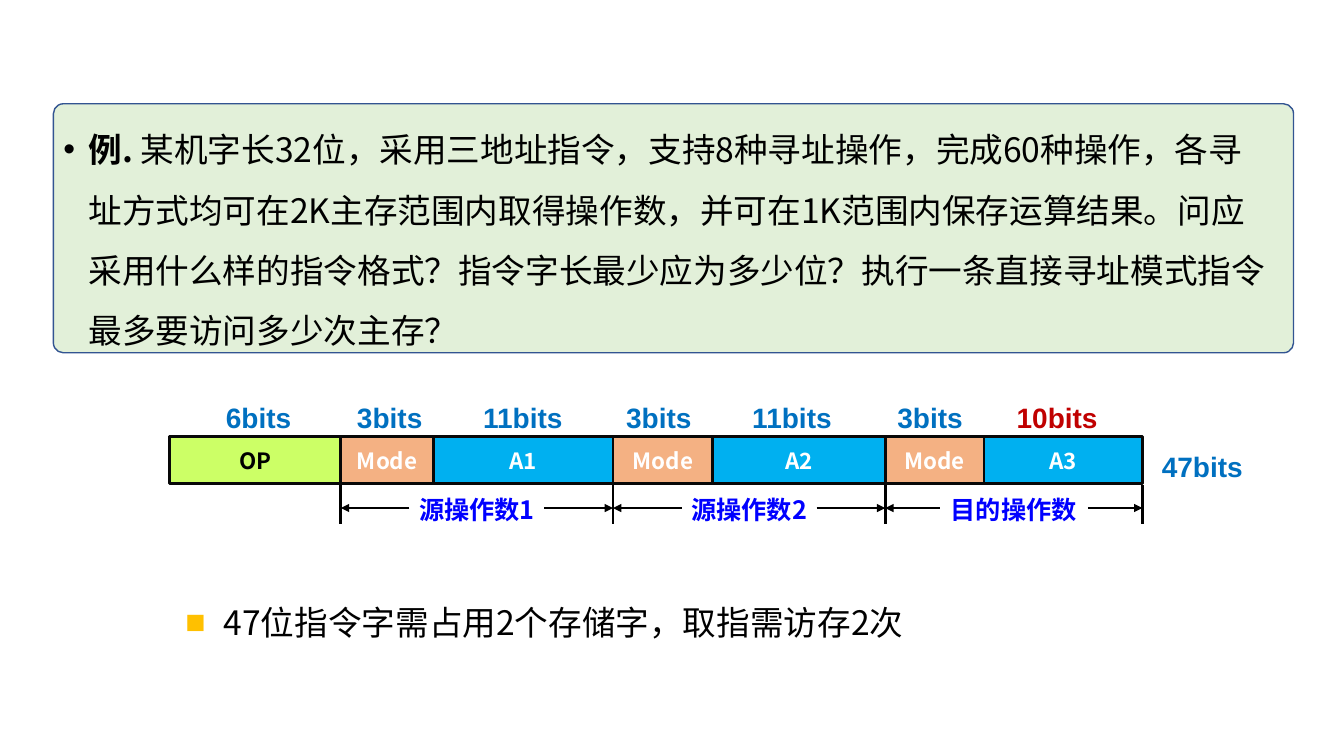
import pptx
import pptx.util
import pptx.dml.color
import pptx.enum.shapes
import pptx.enum.text
import pptx.oxml
import pptx.oxml.ns
import lxml.etree

PX = 9144
COLORS = {
    "black": "000000", "white": "FFFFFF", "panel": "E2F0D9", "panel_line": "325491",
    "op": "CCFF66", "mode": "F4B183", "address": "00B0F0", "cell_line": "080808",
    "bits": "0070C0", "changed_bits": "C00000", "operand": "0000FF", "bullet": "FFC000",
}
CJK = "Noto Sans CJK SC"
ALIGN = pptx.enum.text.PP_ALIGN
SHAPE = pptx.enum.shapes.MSO_SHAPE

FIELDS = [
    ("OP", 170, "op", "black", "6bits", 256, "bits"),
    ("Mode", 92, "mode", "white", "3bits", 386, "bits"),
    ("A1", 178, "address", "white", "11bits", 518, "bits"),
    ("Mode", 99, "mode", "white", "3bits", 653, "bits"),
    ("A2", 171, "address", "white", "11bits", 785, "bits"),
    ("Mode", 98, "mode", "white", "3bits", 922, "bits"),
    ("A3", 157, "address", "white", "10bits", 1048, "changed_bits"),
]
OPERANDS = [("源操作数1", 1, 68), ("源操作数2", 3, 68), ("目的操作数", 5, 54)]
QUESTION = ("某机字长32位，采用三地址指令，支持8种寻址操作，完成60种操作，"
            "各寻址方式均可在2K主存范围内取得操作数，并可在1K范围内保存运算结果。"
            "问应采用什么样的指令格式？指令字长最少应为多少位？"
            "执行一条直接寻址模式指令最多要访问多少次主存？")


def rgb(name):
    """Return the named colour."""
    return pptx.dml.color.RGBColor.from_string(COLORS[name])


def px(*lengths):
    """Turn pixel lengths into EMU."""
    return [pptx.util.Emu(n * PX) for n in lengths]


def format_run(r, size, color, bold=False, font=CJK):
    """Set the font of a run for Latin and East Asian text."""
    r.font.size = pptx.util.Pt(size)
    r.font.bold = bold
    r.font.name = font
    r.font.color.rgb = rgb(color)
    ea = lxml.etree.SubElement(r.font._element, pptx.oxml.ns.qn("a:ea"))
    ea.set("typeface", font)
    r.font._element.find(pptx.oxml.ns.qn("a:latin")).addnext(ea)


def add_box(slide, kind, box, fill, line, width):
    """Draw a filled and outlined shape."""
    sp = slide.shapes.add_shape(kind, *px(*box))
    sp.shadow.inherit = False
    sp.fill.solid()
    sp.fill.fore_color.rgb = rgb(fill)
    sp.line.color.rgb = rgb(line)
    sp.line.width = pptx.util.Pt(width)
    return sp


def add_label(slide, box, text, size, color, font=CJK):
    """Place a centred bold label."""
    tf = slide.shapes.add_textbox(*px(*box)).text_frame
    tf.word_wrap = True
    p = tf.paragraphs[0]
    p.text = text
    p.alignment = ALIGN.CENTER
    format_run(p.runs[0], size, color, True, font)


def add_line(slide, start, end, width, arrow=False):
    """Draw a straight line, with an arrowhead at its end if asked."""
    c = slide.shapes.add_connector(
        pptx.enum.shapes.MSO_CONNECTOR.STRAIGHT, *px(*start, *end))
    c.line.color.rgb = rgb("black")
    c.line.width = pptx.util.Pt(width)
    if arrow:
        ln = c.line._get_or_add_ln()
        lxml.etree.SubElement(ln, pptx.oxml.ns.qn("a:tailEnd")).set("type", "triangle")
    lxml.etree.SubElement(c._element.spPr, pptx.oxml.ns.qn("a:effectLst"))


def add_bullet_text(slide, box, runs, indent, char, color, align):
    """Place a bulleted paragraph made of (text, bold) runs."""
    tf = slide.shapes.add_textbox(*px(*box)).text_frame
    tf.word_wrap = True
    p = tf.paragraphs[0]
    p.alignment = align
    p.line_spacing = 1.5
    p.space_before = pptx.util.Pt(10)
    for text, bold in runs:
        r = p.add_run()
        r.text = text
        format_run(r, 24, "black", bold)
    pPr = p._p.get_or_add_pPr()
    pPr.set("marL", str(indent * PX))
    pPr.set("indent", str(-indent * PX))
    clr = lxml.etree.SubElement(pPr, pptx.oxml.ns.qn("a:buClr"))
    lxml.etree.SubElement(clr, pptx.oxml.ns.qn("a:srgbClr")).set("val", COLORS[color])
    lxml.etree.SubElement(pPr, pptx.oxml.ns.qn("a:buFont")).set("typeface", "Arial")
    lxml.etree.SubElement(pPr, pptx.oxml.ns.qn("a:buChar")).set("char", char)


def add_question(slide, x, y, w, h):
    """Draw the panel with the worked question."""
    sp = add_box(slide, SHAPE.ROUNDED_RECTANGLE, (x, y, w, h), "panel", "panel_line", 1)
    sp.adjustments[0] = 0.04
    add_bullet_text(slide, (x, y, w - 16, h + 64), [("例. ", True), (QUESTION, False)],
                    25, "•", "black", ALIGN.LEFT)


def add_instruction(slide, x, y, h):
    """Draw the instruction word with its bit counts and operand spans."""
    edges = [x]
    for name, w, fill, color, bits, center, bits_color in FIELDS:
        sp = add_box(slide, SHAPE.RECTANGLE, (edges[-1], y, w, h), fill, "cell_line", 2)
        tf = sp.text_frame
        tf.text = name
        tf.vertical_anchor = pptx.enum.text.MSO_ANCHOR.MIDDLE
        tf.paragraphs[0].alignment = ALIGN.CENTER
        format_run(tf.paragraphs[0].runs[0], 16, color, True)
        add_label(slide, (center - 62, y - 41, 125, 44), bits, 20, bits_color, "Arial")
        edges.append(edges[-1] + w)
    add_label(slide, (edges[-1] - 3, y + 8, 125, 44), "47bits", 20, "bits", "Arial")

    for edge in edges[1::2]:
        add_line(slide, (edge, y + h + 1), (edge, y + h + 40), 2)
    for text, first, shaft in OPERANDS:
        left, right = edges[first], edges[first + 2]
        mid = y + h + 24
        add_label(slide, (left, y + h + 5, right - left, 40), text, 18, "operand")
        add_line(slide, (left + shaft, mid), (left, mid), 1.5, True)
        add_line(slide, (right - shaft, mid), (right, mid), 1.5, True)


def add_conclusion(slide, x, y, w, h):
    """Place the concluding remark."""
    add_bullet_text(slide, (x, y, w, h), [("47位指令字需占用2个存储字，取指需访存2次", False)],
                    38, "■", "bullet", ALIGN.JUSTIFY)


def main():
    """Build the slide and save it."""
    prs = pptx.Presentation()
    prs.slide_width, prs.slide_height = px(1333, 750)
    s = prs.slides.add_slide(prs.slide_layouts[6])
    add_question(s, 53, 103, 1230, 247)
    add_instruction(s, 168, 433, 47)
    add_conclusion(s, 174, 572, 972, 141)
    prs.save("out.pptx")


if __name__ == "__main__":
    main()
